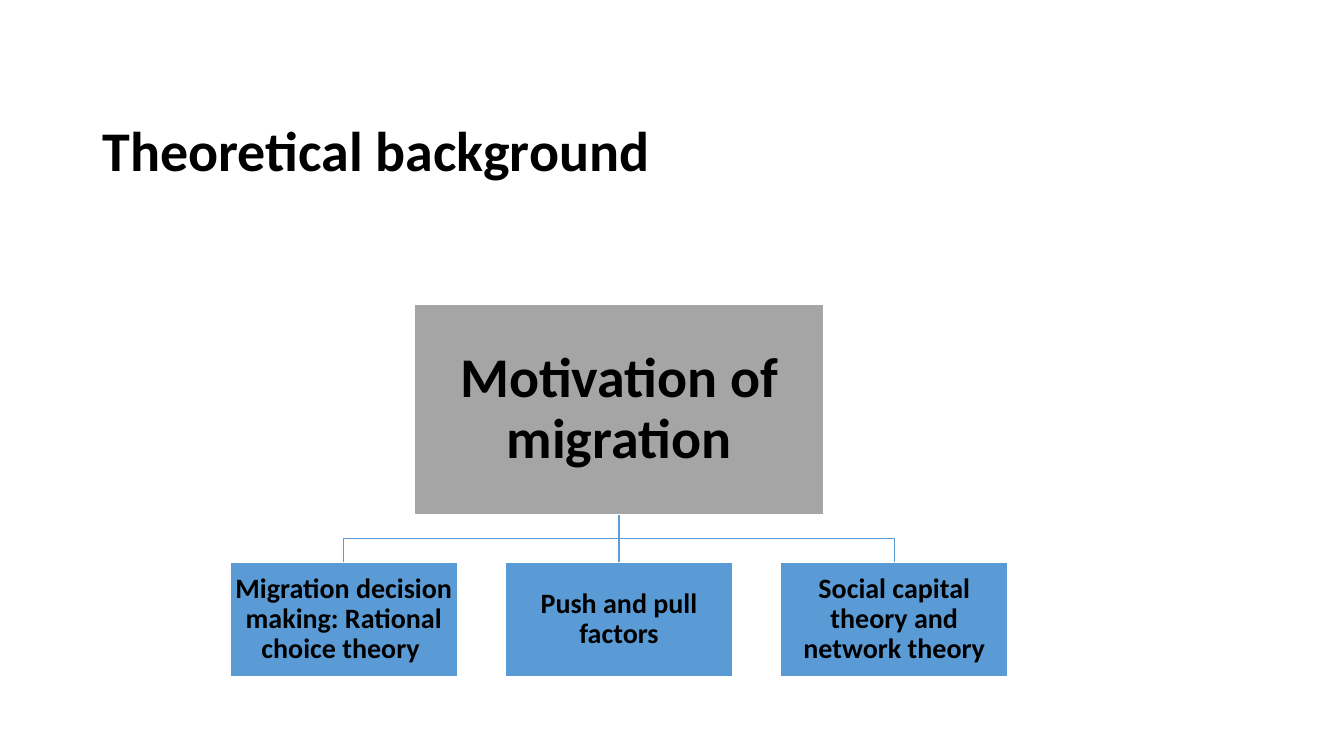
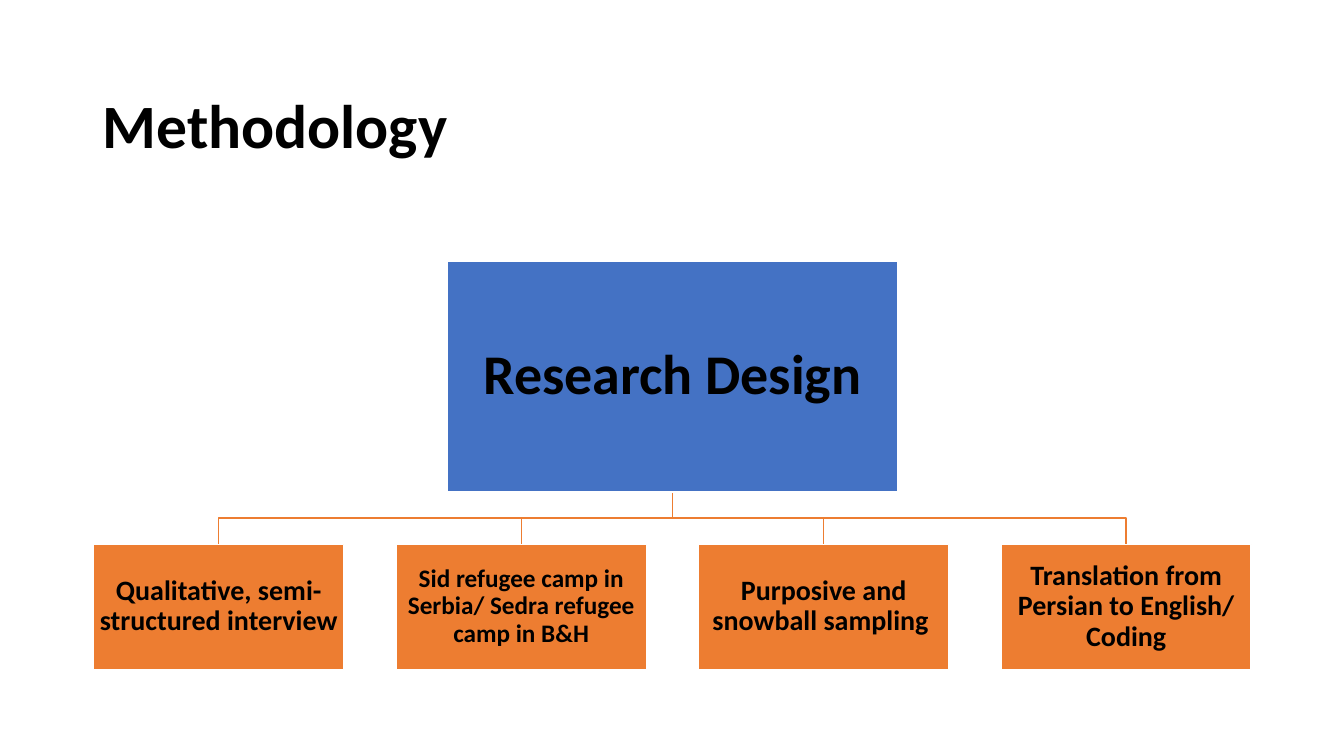
from dataclasses import dataclass

from lxml.etree import SubElement
from pptx import Presentation
from pptx.dml.color import RGBColor
from pptx.enum.shapes import MSO_CONNECTOR as Link, MSO_SHAPE as Kind
from pptx.enum.text import MSO_ANCHOR as Anchor, PP_ALIGN as Align
from pptx.oxml.ns import qn
from pptx.util import Inches, Pt

FONT = "Calibri"
INK = "000000"
EDGE = "FFFFFF"
TITLE_X, TITLE_W, TITLE_H = 0.92, 11.5, 1.45
HEAD_SIZE = 40


@dataclass
class Leaf:
    text: str
    size: int = 20


@dataclass
class Chart:
    """One titled slide with a head box over a row of leaf boxes."""
    title: str
    title_y: float
    title_size: int
    head: str
    head_fill: str
    mid: float
    top: float
    width: float
    height: float
    leaf_fill: str
    leaf_w: float
    leaf_h: float
    gap: float
    leaves: list[Leaf]


CHARTS = [
    Chart("Theoretical background ", 0.8, 40,
          "Motivation of migration", "A5A5A5", 6.14, 3.02, 4.06, 2.09,
          "5B9BD5", 2.26, 1.13, 0.47,
          [Leaf("Migration decision making: Rational choice theory "),
           Leaf("Push and pull factors"),
           Leaf("Social capital theory and network theory")]),
    Chart("Methodology", 0.55, 44,
          "Research Design", "4472C4", 6.67, 2.59, 4.47, 2.29,
          "ED7D31", 2.48, 1.24, 0.52,
          [Leaf("Qualitative, semi-structured interview"),
           Leaf("Sid refugee camp in Serbia/ Sedra refugee camp in B&H", 18),
           Leaf("Purposive and snowball sampling "),
           Leaf("Translation from Persian to English/ Coding")]),
]


def color(code: str) -> RGBColor:
    return RGBColor.from_string(code)


def write(shape, text: str, size: int, align: Align) -> None:
    frame = shape.text_frame
    frame.word_wrap = True
    frame.vertical_anchor = Anchor.MIDDLE
    par = frame.paragraphs[0]
    par.alignment = align
    par.line_spacing = 0.9
    run = par.add_run()
    run.text = text
    font = run.font
    font.name, font.size, font.bold = FONT, Pt(size), True
    font.color.rgb = color(INK)


def add_title(slide, text: str, top: float, size: int) -> None:
    box = slide.shapes.add_textbox(Inches(TITLE_X), Inches(top),
                                   Inches(TITLE_W), Inches(TITLE_H))
    write(box, text, size, Align.LEFT)


def stroke(shape, ink: str) -> None:
    shape.line.color.rgb = color(ink)
    shape.line.width = Pt(1)


def add_box(slide, x: float, y: float, w: float, h: float,
            fill: str, text: str, size: int, inset: float):
    box = slide.shapes.add_shape(Kind.RECTANGLE, Inches(x), Inches(y),
                                 Inches(w), Inches(h))
    box.shadow.inherit = False
    box.fill.solid()
    box.fill.fore_color.rgb = color(fill)
    stroke(box, EDGE)
    frame = box.text_frame
    frame.margin_left = frame.margin_right = Inches(inset)
    frame.margin_top = frame.margin_bottom = Inches(inset)
    write(box, text, size, Align.CENTER)
    return box


def add_elbow(slide, x1: float, y1: float, x2: float, y2: float,
              ink: str) -> None:
    """Draw a branch that goes down, across and down again."""
    rail = (y1 + y2) / 2
    pen = slide.shapes.build_freeform(Inches(x1), Inches(y1))
    turns = [(x1, rail), (x2, rail), (x2, y2)]
    pen.add_line_segments([(Inches(x), Inches(y)) for x, y in turns],
                          close=False)
    elbow = pen.convert_to_shape()
    elbow.shadow.inherit = False
    elbow.fill.background()
    stroke(elbow, ink)


def join(slide, head, leaf, ink: str) -> None:
    """Link a head box straight down to the leaf below it."""
    mid = head.left + head.width // 2
    line = slide.shapes.add_connector(Link.STRAIGHT, mid,
                                      head.top + head.height, mid, leaf.top)
    line.begin_connect(head, 2)
    line.end_connect(leaf, 0)
    stroke(line, ink)
    SubElement(line._element.spPr, qn("a:effectLst"))


def draw(slide, chart: Chart) -> None:
    add_title(slide, chart.title, chart.title_y, chart.title_size)
    base = chart.top + chart.height
    row = base + chart.gap
    pitch = chart.leaf_w + chart.gap
    half = (len(chart.leaves) - 1) / 2
    steps = [i - half for i in range(len(chart.leaves))]

    for step in reversed(steps):
        if step:
            add_elbow(slide, chart.mid, base, chart.mid + step * pitch, row,
                      chart.leaf_fill)

    head = add_box(slide, chart.mid - chart.width / 2, chart.top, chart.width,
                   chart.height, chart.head_fill, chart.head, HEAD_SIZE, 0.03)
    for step, leaf in zip(steps, chart.leaves):
        x = chart.mid + step * pitch - chart.leaf_w / 2
        box = add_box(slide, x, row, chart.leaf_w, chart.leaf_h,
                      chart.leaf_fill, leaf.text, leaf.size, 0.01)
        if not step:
            join(slide, head, box, chart.leaf_fill)


def main() -> None:
    deck = Presentation()
    deck.slide_width, deck.slide_height = Inches(13.33), Inches(7.5)
    for chart in CHARTS:
        draw(deck.slides.add_slide(deck.slide_layouts[6]), chart)
    deck.save("out.pptx")


if __name__ == "__main__":
    main()
